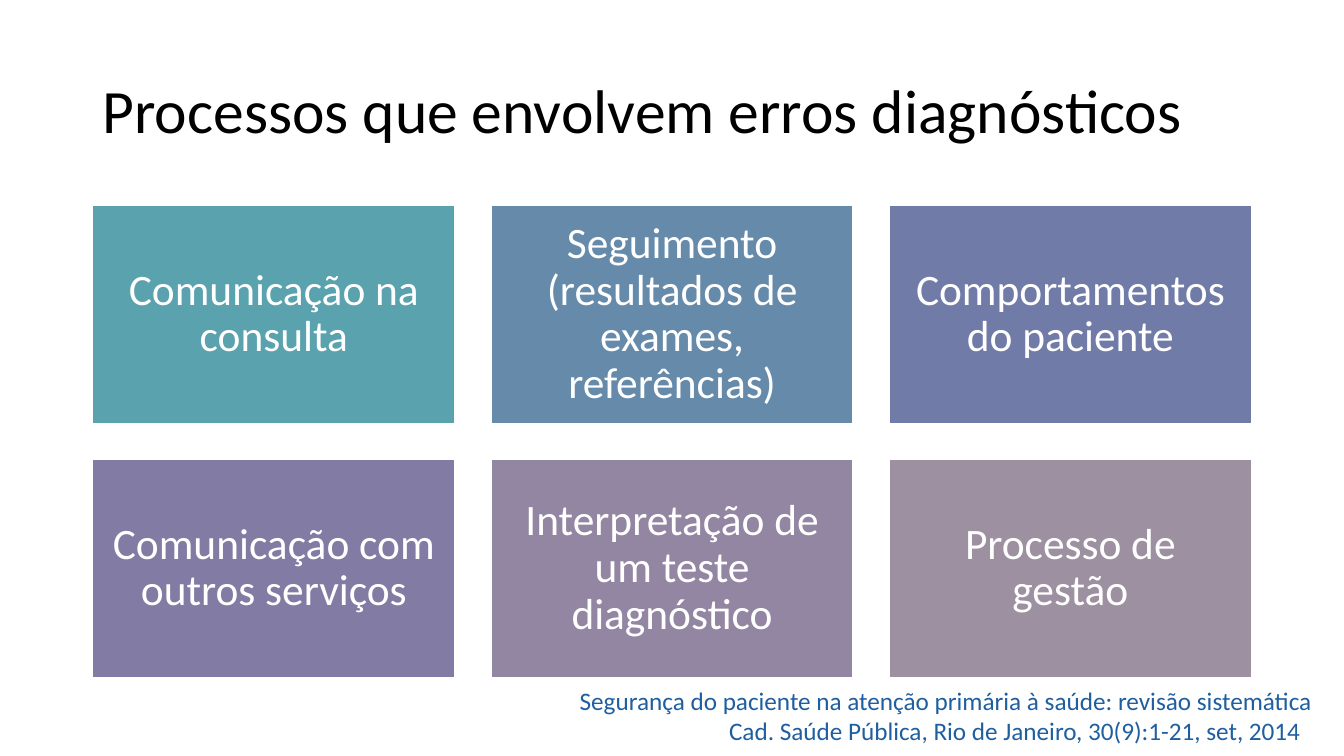
from pptx import Presentation
from pptx.dml.color import RGBColor
from pptx.enum.shapes import MSO_SHAPE
from pptx.enum.text import MSO_ANCHOR, PP_ALIGN
from pptx.util import Inches, Pt

# Content
TITLE = "Processos que envolvem erros diagnósticos"
CARDS = [
    ("Comunicação na consulta", "teal"),
    ("Seguimento (resultados de exames, referências)", "blue"),
    ("Comportamentos do paciente", "indigo"),
    ("Comunicação com outros serviços", "violet"),
    ("Interpretação de um teste diagnóstico", "purple"),
    ("Processo de gestão", "mauve"),
]
# Each source line with its right indent in inches
SOURCE = [
    ("Segurança do paciente na atenção primária à saúde: revisão sistemática", 0),
    ("Cad. Saúde Pública, Rio de Janeiro, 30(9):1-21, set, 2014", 0.11),
]
COLORS = {
    "black": "000000", "white": "FFFFFF", "link": "1F5FA0",
    "teal": "5AA2AE", "blue": "668AAA", "indigo": "717BA7",
    "violet": "827CA4", "purple": "9386A2", "mauve": "9D90A0",
}

# Card grid, in inches
COLS = 3
LEFT, TOP = 0.92, 2.04
WIDTH, HEIGHT = 3.59, 2.16
GAP = 0.36


def color(name):
    return RGBColor.from_string(COLORS[name])


def write(shape, lines, size, ink, align=PP_ALIGN.LEFT,
          anchor=MSO_ANCHOR.MIDDLE, spacing=0.9, inset=None):
    """Fill a shape with (text, right indent) lines in one format."""
    frame = shape.text_frame
    frame.word_wrap = True
    frame.vertical_anchor = anchor
    if inset is not None:
        frame.margin_left = frame.margin_right = Inches(inset)
        frame.margin_top = frame.margin_bottom = Inches(inset)
    for i, (text, indent) in enumerate(lines):
        para = frame.add_paragraph() if i else frame.paragraphs[0]
        para.alignment = align
        para.line_spacing = spacing
        if indent:
            para._p.get_or_add_pPr().set("marR", str(Inches(indent)))
        run = para.add_run()
        run.text = text
        run.font.name = "Calibri"
        run.font.size = Pt(size)
        run.font.color.rgb = color(ink)


def main():
    deck = Presentation()
    deck.slide_width, deck.slide_height = Inches(13.33), Inches(7.5)
    shapes = deck.slides.add_slide(deck.slide_layouts[6]).shapes

    # Title
    title = shapes.add_textbox(Inches(0.92), Inches(0.4), Inches(11.5), Inches(1.45))
    write(title, [(TITLE, 0)], 44, "black")

    # Cards
    for i, (text, fill) in enumerate(CARDS):
        row, col = divmod(i, COLS)
        card = shapes.add_shape(
            MSO_SHAPE.RECTANGLE,
            Inches(LEFT + col * (WIDTH + GAP)), Inches(TOP + row * (HEIGHT + GAP)),
            Inches(WIDTH), Inches(HEIGHT))
        card.shadow.inherit = False
        card.fill.solid()
        card.fill.fore_color.rgb = color(fill)
        card.line.color.rgb = color("white")
        card.line.width = Pt(1)
        write(card, [(text, 0)], 31, "white", align=PP_ALIGN.CENTER, inset=0.13)

    # Source
    source = shapes.add_textbox(Inches(1.94), Inches(6.75), Inches(11.17), Inches(0.71))
    write(source, SOURCE, 18, "link", align=PP_ALIGN.RIGHT,
          anchor=MSO_ANCHOR.TOP, spacing=1.0)

    deck.save("out.pptx")


if __name__ == "__main__":
    main()
